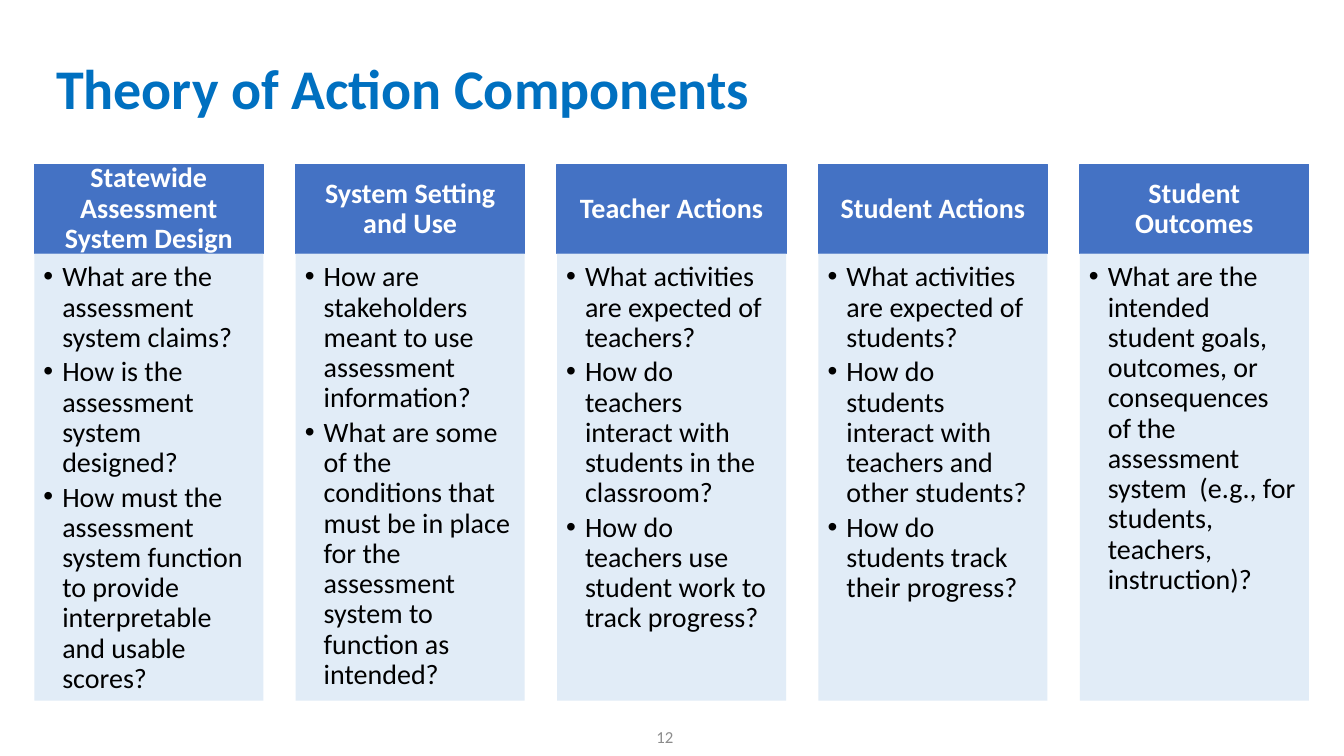
from lxml import etree
from pptx import Presentation
from pptx.dml.color import RGBColor
from pptx.enum.shapes import MSO_SHAPE
from pptx.enum.text import MSO_ANCHOR, PP_ALIGN
from pptx.oxml.ns import qn
from pptx.util import Pt

RECT = MSO_SHAPE.RECTANGLE
TOP, MIDDLE = MSO_ANCHOR.TOP, MSO_ANCHOR.MIDDLE
LEFT, CENTER, RIGHT = PP_ALIGN.LEFT, PP_ALIGN.CENTER, PP_ALIGN.RIGHT

TITLE_BLUE = RGBColor(0x00, 0x70, 0xC0)
HEADER_BLUE = RGBColor(0x44, 0x72, 0xC4)
PALE_BLUE = RGBColor(0xDE, 0xEB, 0xF7)
GREY = RGBColor(0x8C, 0x8C, 0x8C)
WHITE = RGBColor(0xFF, 0xFF, 0xFF)
BLACK = RGBColor(0x00, 0x00, 0x00)

COLUMN_LEFT, COLUMN_STEP, COLUMN_WIDTH = 24.5, 186.7, 163.6
HEADER_TOP, HEADER_HEIGHT, BODY_HEIGHT = 117.4, 63.8, 319.3
BULLET_INDENT = Pt(13.5)

COMPONENTS = [
    ("Statewide Assessment System Design", [
        "What are the assessment system claims?",
        "How is the assessment system designed?",
        "How must the assessment system function to provide interpretable and usable scores?",
    ]),
    ("System Setting and Use", [
        "How are stakeholders meant to use assessment information?",
        "What are some of the conditions that must be in place for the assessment system "
        "to function as intended?",
    ]),
    ("Teacher Actions", [
        "What activities are expected of teachers?",
        "How do teachers interact with students in the classroom?",
        "How do teachers use student work to track progress?",
    ]),
    ("Student Actions", [
        "What activities are expected of students?",
        "How do students interact with teachers and other students?",
        "How do students track their progress?",
    ]),
    ("Student Outcomes", [
        "What are the intended student goals, outcomes, or consequences of the assessment "
        "system  (e.g., for students, teachers, instruction)?",
    ]),
]


def set_attributes(target, values):
    for name, value in values.items():
        setattr(target, name, value)


def set_frame(tf, anchor, insets=(7.2, 3.6, 7.2, 3.6)):
    """Wrap the text frame; insets are left, top, right, bottom in points."""
    sides = ("margin_left", "margin_top", "margin_right", "margin_bottom")
    set_attributes(tf, {"word_wrap": True, "vertical_anchor": anchor})
    set_attributes(tf, dict(zip(sides, map(Pt, insets))))


def add_bullet(p):
    pPr = p._p.get_or_add_pPr()
    pPr.set("marL", str(BULLET_INDENT))
    pPr.set("indent", str(-BULLET_INDENT))
    etree.SubElement(pPr, qn("a:buFont")).set("typeface", "Arial")
    etree.SubElement(pPr, qn("a:buChar")).set("char", "•")


def write_paragraphs(tf, lines, size, color, bold=False, align=LEFT, spacing=0.9, bullets=False):
    for i, line in enumerate(lines):
        p = tf.paragraphs[0] if i == 0 else tf.add_paragraph()
        set_attributes(p, {"alignment": align, "line_spacing": spacing})
        if bullets:
            p.space_after = Pt(3)
            add_bullet(p)
        r = p.add_run()
        r.text = line
        set_attributes(r.font, {"name": "Calibri", "size": Pt(size), "bold": bold})
        r.font.color.rgb = color


def add_label(slide, box, text, size, color, **style):
    tf = slide.shapes.add_textbox(*map(Pt, box)).text_frame
    set_frame(tf, MIDDLE)
    write_paragraphs(tf, [text], size, color, **style)


def add_panel(slide, box, fill):
    s = slide.shapes.add_shape(RECT, *map(Pt, box))
    s.shadow.inherit = False
    s.fill.solid()
    s.fill.fore_color.rgb = fill
    return s


def add_header(slide, left, text):
    s = add_panel(slide, (left, HEADER_TOP, COLUMN_WIDTH, HEADER_HEIGHT), HEADER_BLUE)
    s.line.color.rgb = HEADER_BLUE
    s.line.width = Pt(1)
    set_frame(s.text_frame, MIDDLE, (8.6, 5, 8.6, 5))
    write_paragraphs(s.text_frame, [text], 20, WHITE, bold=True, align=CENTER)


def add_questions(slide, left, questions):
    s = add_panel(slide, (left, HEADER_TOP + HEADER_HEIGHT, COLUMN_WIDTH, BODY_HEIGHT), PALE_BLUE)
    color = s._element.spPr.find(qn("a:solidFill"))[0]
    etree.SubElement(color, qn("a:alpha")).set("val", "90000")
    s.line.fill.background()
    set_frame(s.text_frame, TOP, (6.5, 6.5, 8.6, 10))
    write_paragraphs(s.text_frame, questions, 20, BLACK, bullets=True)


def main():
    prs = Presentation()
    prs.slide_width, prs.slide_height = Pt(960), Pt(540)
    slide = prs.slides.add_slide(prs.slide_layouts[6])
    add_label(slide, (33, 20, 792, 90), "Theory of Action Components", 40, TITLE_BLUE, bold=True)
    add_label(slide, (272, 512, 216, 28.8), "12", 12, GREY, align=RIGHT, spacing=1.0)
    for i, (heading, questions) in enumerate(COMPONENTS):
        left = COLUMN_LEFT + i * COLUMN_STEP
        add_header(slide, left, heading)
        add_questions(slide, left, questions)
    prs.save("out.pptx")


if __name__ == "__main__":
    main()
